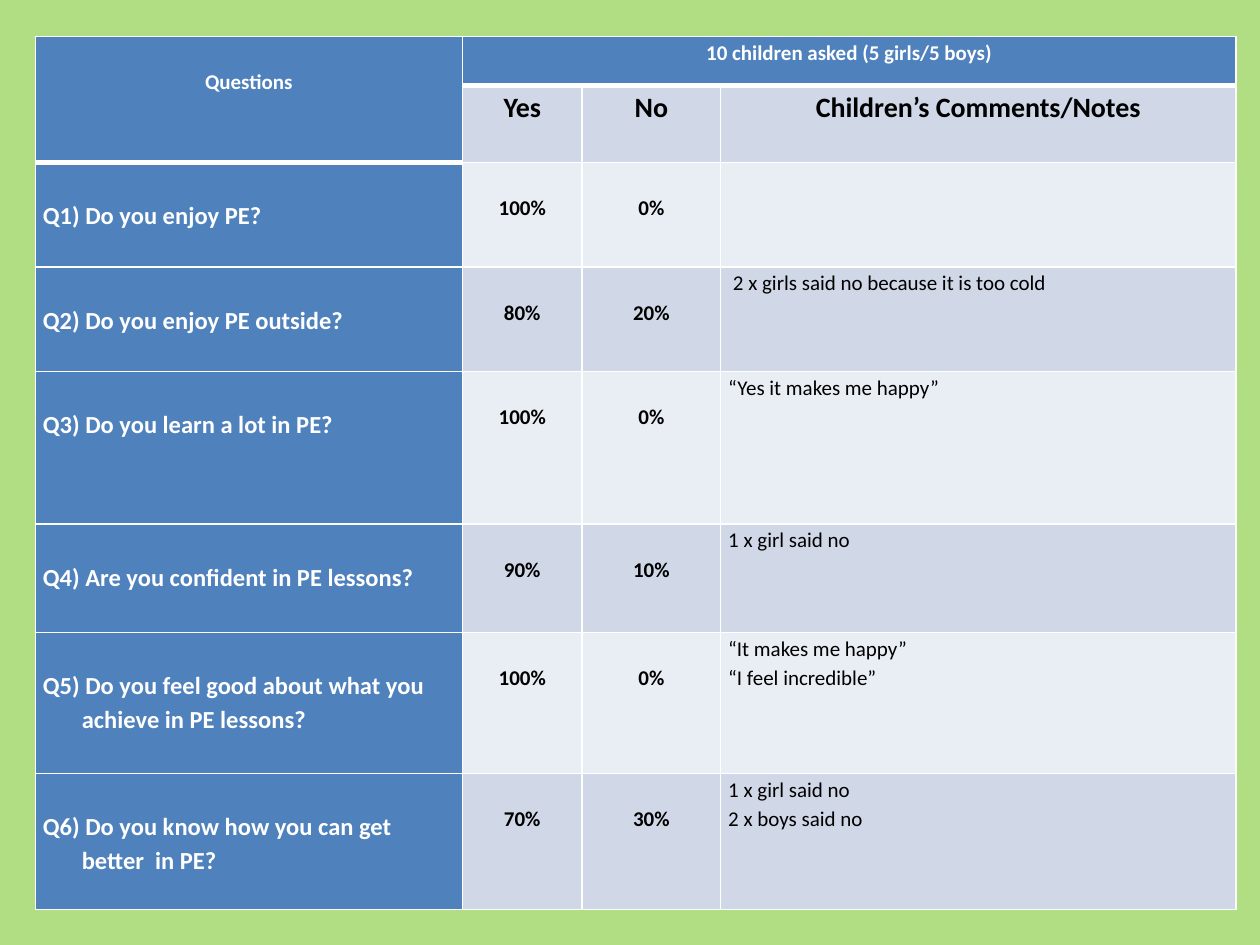
from dataclasses import dataclass

from lxml.etree import SubElement
from pptx import Presentation
from pptx.dml.color import RGBColor
from pptx.enum.text import PP_ALIGN
from pptx.oxml.ns import qn
from pptx.table import Table, _Cell
from pptx.util import Inches, Pt

WHITE = RGBColor(0xFF, 0xFF, 0xFF)
BLACK = RGBColor(0x00, 0x00, 0x00)
GREEN = RGBColor(0xB2, 0xDE, 0x83)
BLUE = RGBColor(0x4F, 0x81, 0xBD)
BANDS = (RGBColor(0xE9, 0xED, 0xF4), RGBColor(0xD0, 0xD8, 0xE8))

W, H = Inches(10), Inches(7.5)
LEFT, TOP = 2.8, 3.87
COL_SHARES = (33.9, 9.5, 11, 40.9)
ROW_SHARES = (5.2, 8.13, 11.07, 11.07, 16.13, 11.47, 14.93, 14.4)
SIDE_MARGIN = Inches(0.06)
LINE_SPACING = 1.15
LINE_PITCH = 1.4
HANG = Inches(0.31)
THICK_BELOW = {(0, 1), (0, 2), (0, 3), (1, 0)}


@dataclass(frozen=True)
class Question:
    """A survey question with its share of yes answers and the comments."""
    text: str
    yes: int
    comments: str = ""


QUESTIONS = (
    Question("Q1) Do you enjoy PE?", 100),
    Question("Q2) Do you enjoy PE outside?", 80,
             " 2 x girls said no because it is too cold"),
    Question("Q3) Do you learn a lot in PE?", 100, "“Yes it makes me happy”"),
    Question("Q4) Are you confident in PE lessons?", 90, "1 x girl said no"),
    Question("Q5) Do you feel good about what you\nachieve in PE lessons?", 100,
             "“It makes me happy”\n“I feel incredible”"),
    Question("Q6) Do you know how you can get\nbetter  in PE?", 70,
             "1 x girl said no\n2 x boys said no"),
)


def share(percent: float, whole: int) -> int:
    """Return a percentage of a slide dimension."""
    return round(whole * percent / 100)


def write(cell: _Cell, text: str, *, fill: RGBColor, size: float = 12,
          color: RGBColor = BLACK, bold: bool = True, center: bool = True,
          lines_above: int = 0, hang: int = 0) -> None:
    """Fill a cell and set its text, one paragraph for each line."""
    cell.fill.solid()
    cell.fill.fore_color.rgb = fill
    cell.margin_left = cell.margin_right = SIDE_MARGIN
    cell.margin_top = Pt(lines_above * size * LINE_PITCH)
    cell.margin_bottom = 0
    tf = cell.text_frame
    for i, line in enumerate(text.split("\n")):
        p = tf.add_paragraph() if i else tf.paragraphs[0]
        p.alignment = PP_ALIGN.CENTER if center else PP_ALIGN.LEFT
        p.line_spacing = LINE_SPACING
        if i and hang:
            p._p.get_or_add_pPr().set("marL", str(hang))
        if line:
            r = p.add_run()
            r.text = line
            r.font.name, r.font.size, r.font.bold = "Calibri", Pt(size), bold
            r.font.color.rgb = color


def add_borders(table: Table) -> None:
    """Rule every cell in white, thicker below the headings."""
    for row in range(len(ROW_SHARES)):
        for col in range(len(COL_SHARES)):
            tc_pr = table.cell(row, col)._tc.get_or_add_tcPr()
            widths = {"lnL": 1, "lnR": 1,
                      "lnT": 3 if (row - 1, col) in THICK_BELOW else 1,
                      "lnB": 3 if (row, col) in THICK_BELOW else 1}
            for tag, width in widths.items():
                ln = SubElement(tc_pr, qn(f"a:{tag}"), w=str(Pt(width)))
                solid = SubElement(ln, qn("a:solidFill"))
                SubElement(solid, qn("a:srgbClr"), val=str(WHITE))


def add_grid(s) -> Table:
    """Add the ruled table with its column widths and row heights."""
    table = s.shapes.add_table(
        len(ROW_SHARES), len(COL_SHARES), share(LEFT, W), share(TOP, H),
        share(sum(COL_SHARES), W), share(sum(ROW_SHARES), H)).table
    table.first_row = table.horz_banding = False
    for col, percent in zip(table.columns, COL_SHARES):
        col.width = share(percent, W)
    for row, percent in zip(table.rows, ROW_SHARES):
        row.height = share(percent, H)
    add_borders(table)
    return table


def write_headings(table: Table) -> None:
    """Merge and label the two heading rows."""
    table.cell(0, 0).merge(table.cell(1, 0))
    table.cell(0, 1).merge(table.cell(0, 3))
    write(table.cell(0, 0), "Questions", fill=BLUE, color=WHITE, lines_above=1)
    write(table.cell(0, 1), "10 children asked (5 girls/5 boys)", fill=BLUE, color=WHITE)
    for col, label in enumerate(("Yes", "No", "Children’s Comments/Notes"), 1):
        write(table.cell(1, col), label, fill=BANDS[1], size=16)


def write_question(table: Table, row: int, q: Question) -> None:
    """Write one question with its answers and comments."""
    band = BANDS[row % 2]
    write(table.cell(row, 0), q.text, fill=BLUE, size=14, color=WHITE,
          center=False, lines_above=1, hang=HANG)
    for col, percent in enumerate((q.yes, 100 - q.yes), 1):
        write(table.cell(row, col), f"{percent}%", fill=band, lines_above=1)
    write(table.cell(row, 3), q.comments, fill=band, bold=False, center=False)


def main() -> None:
    """Build the survey slide and save it."""
    prs = Presentation()
    prs.slide_width, prs.slide_height = W, H
    s = prs.slides.add_slide(prs.slide_layouts[6])
    s.background.fill.solid()
    s.background.fill.fore_color.rgb = GREEN
    table = add_grid(s)
    write_headings(table)
    for row, q in enumerate(QUESTIONS, 2):
        write_question(table, row, q)
    prs.save("out.pptx")


if __name__ == "__main__":
    main()
